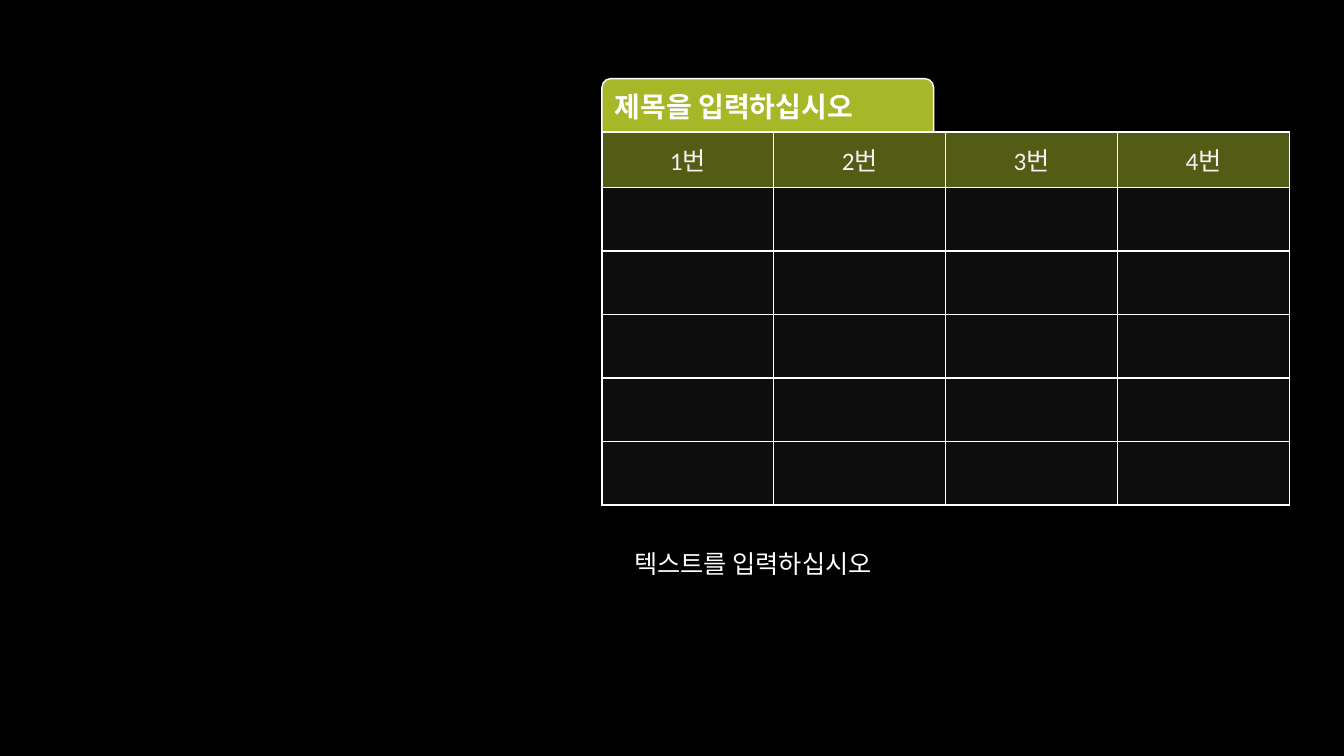
from dataclasses import dataclass

from lxml import etree
from pptx import Presentation
from pptx import util as u
from pptx.dml.color import RGBColor
from pptx.enum import shapes, text
from pptx.oxml import ns


@dataclass(frozen=True)
class Theme:
    """Colours, font and type sizes of the slide."""
    font: str = "Calibri"
    back: str = "000000"
    accent: str = "A6B727"
    header: str = "535C14"
    body: str = "0D0D0D"
    line: str = "FFFFFF"
    title_text: str = "FFFFFF"
    header_text: str = "F2F2F2"
    title_size: int = 20
    text_size: int = 18


def inches(*values):
    """Convert numbers to lengths."""
    return [u.Inches(v) for v in values]


class Deck:
    """Draw styled elements on the current slide."""

    def __init__(self, prs, theme):
        """Add a blank slide with the theme background."""
        self.theme = theme
        self.slide = prs.slides.add_slide(prs.slide_layouts[6])
        self.paint(self.slide.background.fill, theme.back)

    def paint(self, fill, color):
        """Make a fill solid."""
        fill.solid()
        fill.fore_color.rgb = RGBColor.from_string(color)

    def add_words(self, tf, words, color, size, align=text.PP_ALIGN.LEFT, bold=False):
        """Put one formatted run in a text frame."""
        p = tf.paragraphs[0]
        p.alignment = align
        r = p.add_run()
        r.text = words
        style = {"name": self.theme.font, "size": u.Pt(size), "bold": bold}
        for key, value in style.items():
            setattr(r.font, key, value)
        r.font.color.rgb = RGBColor.from_string(color)

    def tab(self, words, *box):
        """Draw a title tab with rounded top corners."""
        t = self.theme
        sp = self.slide.shapes.add_shape(
            shapes.MSO_SHAPE.ROUND_2_SAME_RECTANGLE, *inches(*box))
        sp.shadow.inherit = False
        self.paint(sp.fill, t.accent)
        self.paint(sp.line.fill, t.line)
        sp.line.width = u.Pt(1)
        sp.text_frame.vertical_anchor = text.MSO_ANCHOR.MIDDLE
        self.add_words(sp.text_frame, words, t.title_text, t.title_size, bold=True)

    def borders(self, cell):
        """Line all four sides of a cell."""
        tcPr = cell._tc.get_or_add_tcPr()
        for i, side in enumerate(("lnL", "lnR", "lnT", "lnB")):
            ln = etree.Element(ns.qn(f"a:{side}"), w=str(u.Pt(1)))
            fill = etree.SubElement(ln, ns.qn("a:solidFill"))
            etree.SubElement(fill, ns.qn("a:srgbClr"), val=self.theme.line)
            tcPr.insert(i, ln)

    def grid(self, heads, heights, left, top, width):
        """Draw a table with a header row and empty body rows."""
        t = self.theme
        box = inches(left, top, width, sum(heights))
        table = self.slide.shapes.add_table(len(heights), len(heads), *box).table
        for column in table.columns:
            column.width = u.Inches(width / len(heads))
        for row, height in zip(table.rows, heights):
            row.height = u.Inches(height)
        for cell in table.iter_cells():
            self.paint(cell.fill, t.body)
            self.borders(cell)
        for cell, words in zip(table.rows[0].cells, heads):
            self.paint(cell.fill, t.header)
            cell.vertical_anchor = text.MSO_ANCHOR.MIDDLE
            self.add_words(cell.text_frame, words, t.header_text, t.text_size,
                           text.PP_ALIGN.CENTER)

    def label(self, words, *box):
        """Add a wrapped text box that grows with its text."""
        tf = self.slide.shapes.add_textbox(*inches(*box)).text_frame
        frame = {"word_wrap": True,
                 "auto_size": text.MSO_AUTO_SIZE.SHAPE_TO_FIT_TEXT}
        for key, value in frame.items():
            setattr(tf, key, value)
        self.add_words(tf, words, self.theme.title_text, self.theme.text_size)


def main():
    """Build and save the slide."""
    prs = Presentation()
    prs.slide_width, prs.slide_height = inches(13.33, 7.5)
    deck = Deck(prs, Theme())
    deck.tab("제목을 입력하십시오", 5.97, 0.78, 3.29, 0.53)
    heads = [f"{n}번" for n in range(1, 5)]
    deck.grid(heads, [0.55] + [0.63] * 5, 5.97, 1.31, 6.82)
    deck.label("텍스트를 입력하십시오", 6.19, 5.39, 6.38, 0.4)
    prs.save("out.pptx")


if __name__ == "__main__":
    main()
